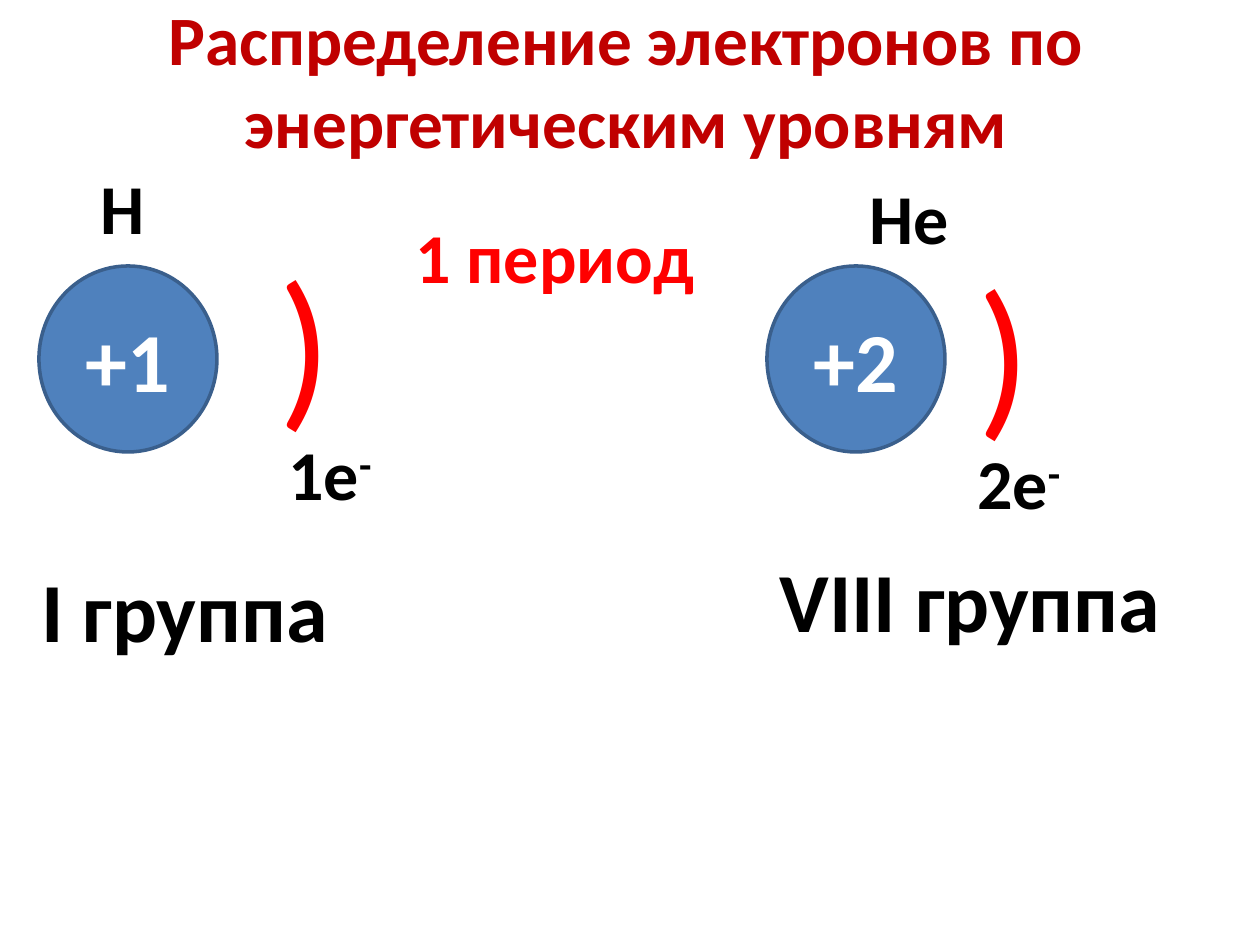
from pptx import Presentation
from pptx.dml.color import RGBColor
from pptx.enum.shapes import MSO_SHAPE as Shape
from pptx.enum.text import MSO_ANCHOR as Anchor, MSO_AUTO_SIZE as AutoSize, PP_ALIGN as Align
from pptx.util import Emu, Pt

PX_PER_INCH = 126
COLORS = {
    "title": "C00000",
    "accent": "FF0000",
    "text": "000000",
    "nucleus": "4F81BD",
    "outline": "3A5F8C",
    "white": "FFFFFF",
}


def px(value):
    return Emu(round(value * 914400 / PX_PER_INCH))


def color(name):
    return RGBColor.from_string(COLORS[name])


class SlideBuilder:
    font_name = "Calibri"

    def __init__(self, slide):
        self.slide = slide

    def add_run(self, paragraph, text, size, color_name, bold=True, superscript=False):
        run = paragraph.add_run()
        run.text = text
        run.font.name = self.font_name
        run.font.size = Pt(size)
        run.font.bold = bold
        run.font.color.rgb = color(color_name)
        if superscript:
            run._r.get_or_add_rPr().set("baseline", "30000")

    def title(self, text, left, top, width, height):
        shape = self.slide.shapes.title
        shape.left, shape.top = px(left), px(top)
        shape.width, shape.height = px(width), px(height)
        frame = shape.text_frame
        frame.auto_size = AutoSize.NONE
        frame.word_wrap = True
        frame.vertical_anchor = Anchor.MIDDLE
        paragraph = frame.paragraphs[0]
        paragraph.alignment = Align.CENTER
        self.add_run(paragraph, text, 39.6, "title")

    def label(self, text, left, top, width, height=97, size=40,
              color_name="text", bold=True, superscript=None):
        box = self.slide.shapes.add_textbox(px(left), px(top), px(width), px(height))
        frame = box.text_frame
        frame.word_wrap = False
        frame.auto_size = AutoSize.SHAPE_TO_FIT_TEXT
        paragraph = frame.paragraphs[0]
        self.add_run(paragraph, text, size, color_name, bold)
        if superscript:
            self.add_run(paragraph, superscript, size, color_name, bold, superscript=True)

    def nucleus(self, charge, left, top=266, width=178, height=186):
        shape = self.slide.shapes.add_shape(
            Shape.OVAL, px(left), px(top), px(width), px(height))
        shape.shadow.inherit = False
        shape.fill.solid()
        shape.fill.fore_color.rgb = color("nucleus")
        shape.line.color.rgb = color("outline")
        shape.line.width = Pt(2)
        frame = shape.text_frame
        frame.vertical_anchor = Anchor.MIDDLE
        paragraph = frame.paragraphs[0]
        paragraph.alignment = Align.CENTER
        self.add_run(paragraph, charge, 48, "white")

    def energy_level(self, electrons, left, top, count_left):
        self.label(")", left, top, 79, 224, size=100, color_name="accent", bold=False)
        self.label(electrons, count_left, top + 197, 111, superscript="-")


def main():
    presentation = Presentation()
    presentation.slide_width = px(1260)
    presentation.slide_height = px(945)
    builder = SlideBuilder(presentation.slides.add_slide(presentation.slide_layouts[5]))

    builder.title("Распределение электронов по энергетическим уровням", 59, 0, 1134, 158)

    # Hydrogen
    builder.nucleus("+1", 39)
    builder.energy_level("1e", 266, 227, count_left=276)
    builder.label("Н", 88, 158, 69)

    # Helium
    builder.label("Не", 857, 168, 106)
    builder.nucleus("+2", 767)
    builder.energy_level("2e", 965, 236, count_left=965)

    # Period and groups
    builder.label("1 период", 403, 207, 305, color_name="accent")
    builder.label("I группа", 29, 552, 315, 115, size=48)
    builder.label("VIII группа", 767, 542, 410, 115, size=48)

    presentation.save("out.pptx")


if __name__ == "__main__":
    main()
